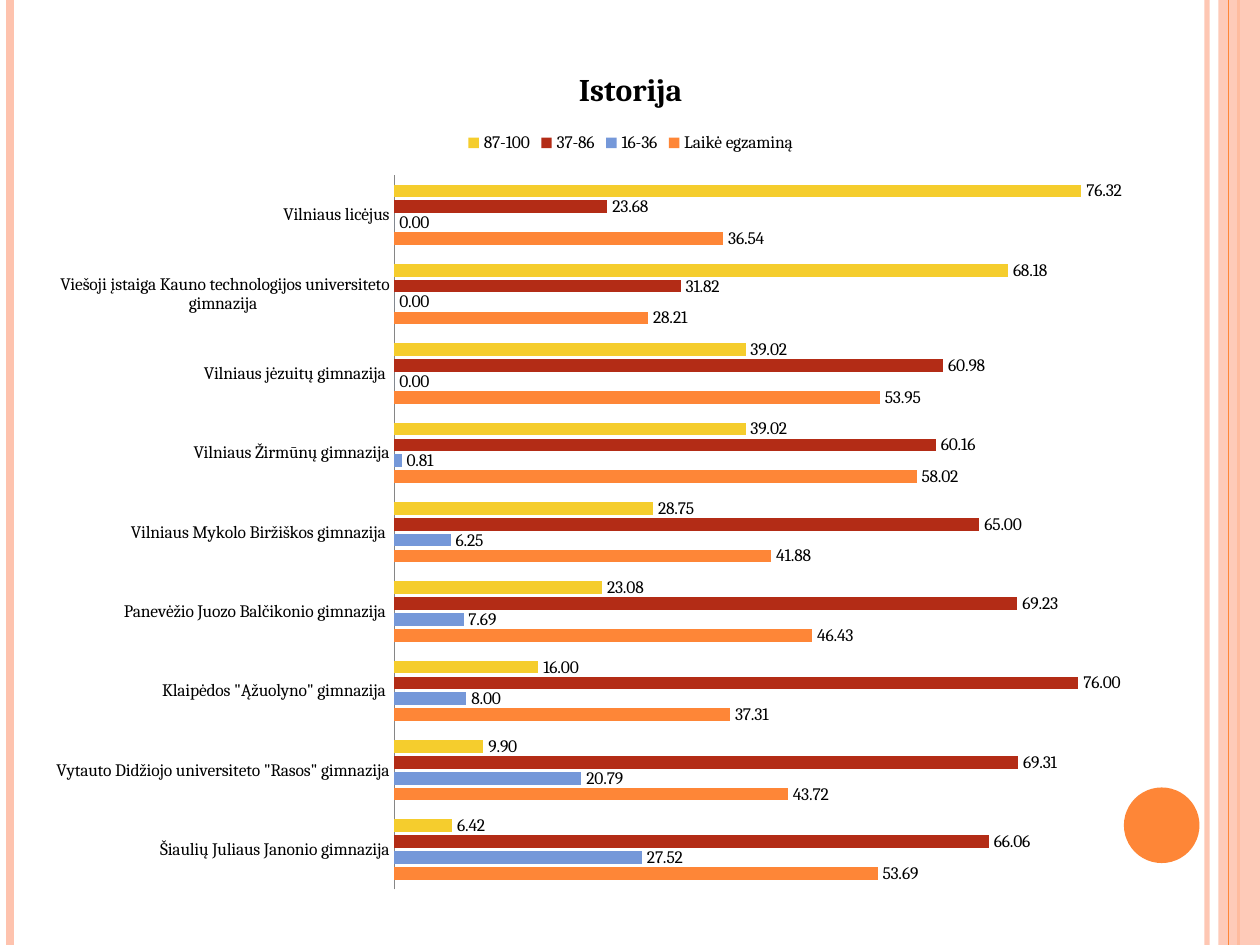
from lxml import etree
from pptx import Presentation
from pptx.chart.data import CategoryChartData
from pptx.dml.color import RGBColor
from pptx.enum.chart import XL_CHART_TYPE, XL_LABEL_POSITION, XL_LEGEND_POSITION, XL_TICK_MARK
from pptx.enum.shapes import MSO_CONNECTOR, MSO_SHAPE
from pptx.oxml import parse_xml
from pptx.oxml.ns import nsdecls, qn
from pptx.util import Inches, Pt

BAR_CLUSTERED = XL_CHART_TYPE.BAR_CLUSTERED
OUTSIDE_END = XL_LABEL_POSITION.OUTSIDE_END
LEGEND_TOP = XL_LEGEND_POSITION.TOP
NO_TICKS = XL_TICK_MARK.NONE
STRAIGHT = MSO_CONNECTOR.STRAIGHT
RECTANGLE, OVAL = MSO_SHAPE.RECTANGLE, MSO_SHAPE.OVAL

TITLE = "Istorija"
SCHOOLS = [
    " Šiaulių Juliaus Janonio gimnazija",
    'Vytauto Didžiojo universiteto "Rasos" gimnazija',
    ' Klaipėdos "Ąžuolyno" gimnazija ',
    "Panevėžio Juozo Balčikonio gimnazija ",
    "Vilniaus Mykolo Biržiškos gimnazija ",
    "Vilniaus Žirmūnų gimnazija",
    " Vilniaus jėzuitų gimnazija ",
    "Viešoji įstaiga Kauno technologijos universiteto gimnazija ",
    "Vilniaus licėjus",
]
RESULTS = [
    ("Laikė egzaminą", "orange", [53.69, 43.72, 37.31, 46.43, 41.88, 58.02, 53.95, 28.21, 36.54]),
    ("16-36", "blue", [27.52, 20.79, 8, 7.69, 6.25, 0.81, 0, 0, 0]),
    ("37-86", "red", [66.06, 69.31, 76, 69.23, 65, 60.16, 60.98, 31.82, 23.68]),
    ("87-100", "yellow", [6.42, 9.9, 16, 23.08, 28.75, 39.02, 39.02, 68.18, 76.32]),
]
THEME = {
    "font": "Cambria",
    "text_size": 10,
    "title_size": 18,
    "orange": "FE8637",
    "peach": "FEC3AE",
    "blue": "7598D9",
    "red": "B32C16",
    "yellow": "F5CD2D",
    "text": "000000",
    "axis": "868686",
}
SLIDE_SIZE = (10, 7.5)
CHART_BOX = (0.26, 0.31, 9.49, 6.89)
PLOT_BOX = (3.13, 1.39, 6.43, 5.67)
SIDE_BAND = (9.67, 0, 0.33, 7.5)
CIRCLE_BOX = (8.92, 6.25, 0.6, 0.6)
STRIPES_BEHIND = [(9.58, "peach", 3, 93), (0.08, "peach", 4.5, 100), (9.83, "orange", 1.5, 100)]
STRIPES_FRONT = [(9.75, "orange", 0.75, 100)]


def color(name):
    return RGBColor.from_string(THEME[name])


def set_opacity(element, percent):
    if percent < 100:
        rgb = next(element.iter(qn("a:srgbClr")))
        etree.SubElement(rgb, qn("a:alpha")).set("val", str(percent * 1000))


def style_font(font, size, bold=False):
    font.name = THEME["font"]
    font.size = Pt(size)
    font.bold = bold
    font.color.rgb = color("text")


def add_stripes(slide, stripes):
    for left, color_name, width, opacity in stripes:
        stripe = slide.shapes.add_connector(
            STRAIGHT, Inches(left), 0, Inches(left), Inches(SLIDE_SIZE[1]))
        stripe.line.color.rgb = color(color_name)
        stripe.line.width = Pt(width)
        properties = stripe._element.spPr
        set_opacity(properties, opacity)
        etree.SubElement(properties, qn("a:effectLst"))


def add_plain_shape(slide, kind, box, color_name, opacity=100):
    shape = slide.shapes.add_shape(kind, *map(Inches, box))
    shape.shadow.inherit = False
    shape.fill.solid()
    shape.fill.fore_color.rgb = color(color_name)
    shape.line.fill.background()
    set_opacity(shape._element.spPr, opacity)


def place_plot(chart):
    left, top, width, height = CHART_BOX
    plot_left, plot_top, plot_width, plot_height = PLOT_BOX
    fractions = {
        "x": (plot_left - left) / width,
        "y": (plot_top - top) / height,
        "w": plot_width / width,
        "h": plot_height / height,
    }
    modes = '<c:xMode val="edge"/><c:yMode val="edge"/>'
    values = "".join(f'<c:{key} val="{value:.4f}"/>' for key, value in fractions.items())
    layout = parse_xml(
        f'<c:layout {nsdecls("c")}><c:manualLayout><c:layoutTarget val="inner"/>'
        f"{modes}{values}</c:manualLayout></c:layout>")
    plot_area = chart._chartSpace.chart.plotArea
    for previous in plot_area.findall(qn("c:layout")):
        plot_area.remove(previous)
    plot_area.insert(0, layout)


def add_results_chart(slide):
    data = CategoryChartData(number_format="0.00")
    data.categories = SCHOOLS
    for name, _, values in RESULTS:
        data.add_series(name, values)
    chart = slide.shapes.add_chart(BAR_CLUSTERED, *map(Inches, CHART_BOX), data).chart
    style_font(chart.font, THEME["text_size"])

    chart.has_title = True
    run = chart.chart_title.text_frame.paragraphs[0].add_run()
    run.text = TITLE
    style_font(run.font, THEME["title_size"], bold=True)
    chart.chart_title.include_in_layout = False

    chart.has_legend = True
    chart.legend.position = LEGEND_TOP
    chart.legend.include_in_layout = False

    schools_axis = chart.category_axis
    schools_axis.major_tick_mark = NO_TICKS
    schools_axis.format.line.color.rgb = color("axis")
    value_axis = chart.value_axis
    value_axis.visible = False
    value_axis.has_major_gridlines = False
    value_axis.minimum_scale = 0
    value_axis.maximum_scale = 90

    plot = chart.plots[0]
    plot.gap_width = 150
    plot.overlap = -25
    plot.vary_by_categories = False
    for series, (_, color_name, _) in zip(plot.series, RESULTS):
        series.format.fill.solid()
        series.format.fill.fore_color.rgb = color(color_name)
        labels = series.data_labels
        labels.show_value = True
        labels.number_format = "0.00"
        labels.number_format_is_linked = False
        labels.position = OUTSIDE_END
    place_plot(chart)


def main():
    presentation = Presentation()
    presentation.slide_width, presentation.slide_height = map(Inches, SLIDE_SIZE)
    slide = presentation.slides.add_slide(presentation.slide_layouts[6])
    add_stripes(slide, STRIPES_BEHIND)
    add_plain_shape(slide, RECTANGLE, SIDE_BAND, "peach", 87)
    add_stripes(slide, STRIPES_FRONT)
    add_plain_shape(slide, OVAL, CIRCLE_BOX, "orange")
    add_results_chart(slide)
    presentation.save("out.pptx")


if __name__ == "__main__":
    main()
